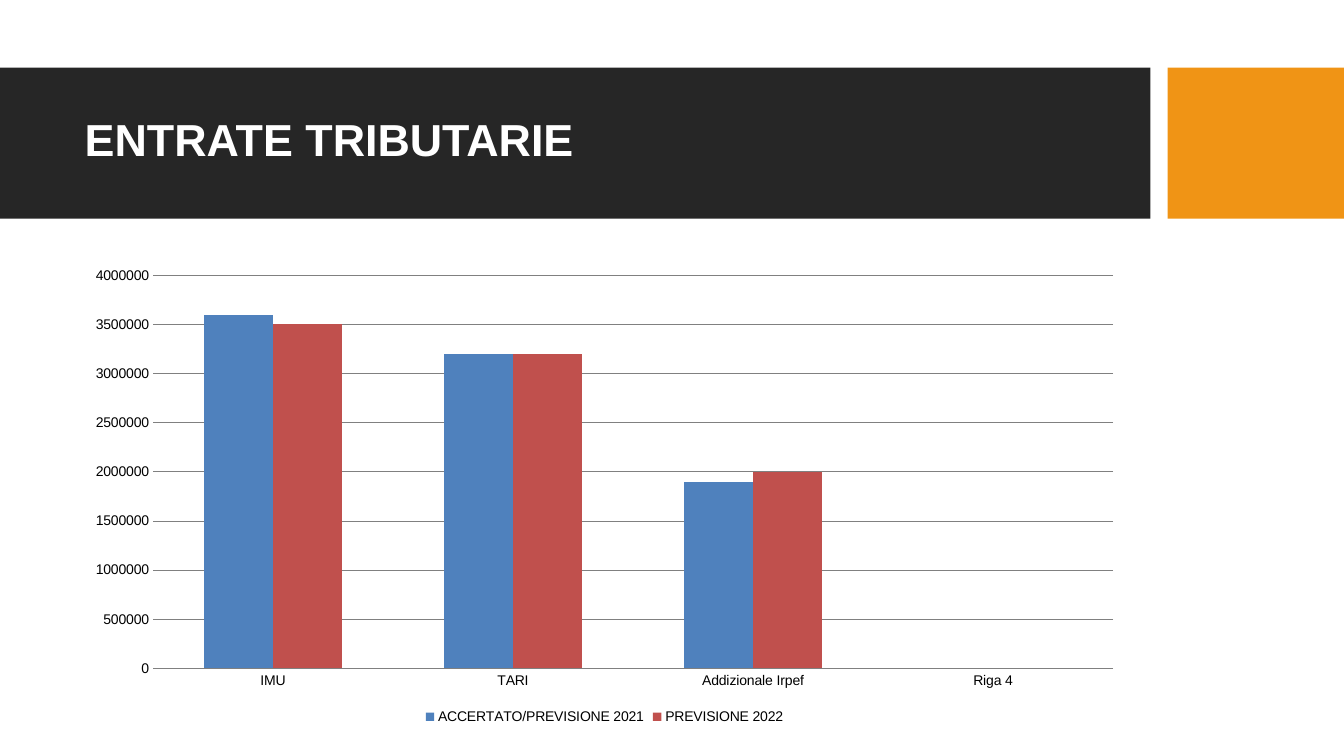
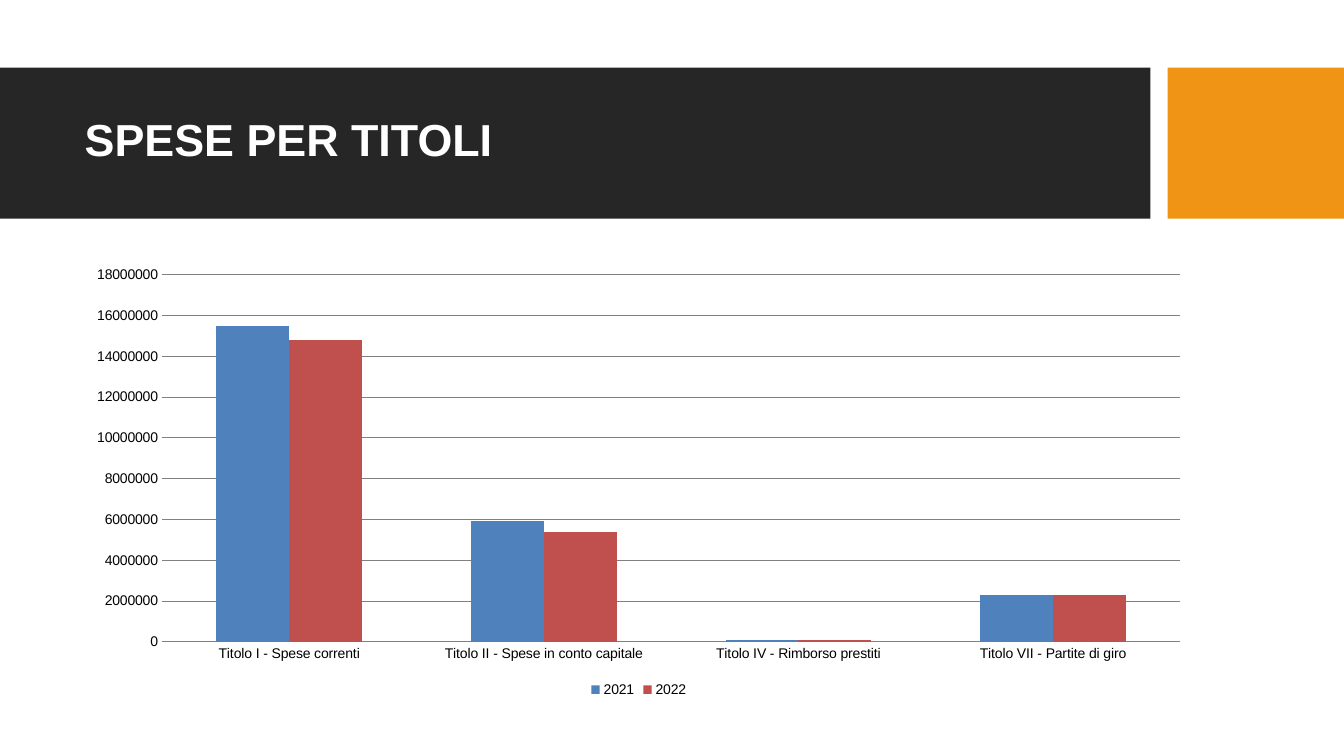
from pptx import Presentation
from pptx.chart.data import CategoryChartData as Data
from pptx.dml.color import RGBColor
from pptx.enum.chart import XL_CHART_TYPE as Kind
from pptx.enum.chart import XL_LEGEND_POSITION as Place
from pptx.enum.chart import XL_TICK_MARK as Tick
from pptx.enum.shapes import MSO_SHAPE as Shape
from pptx.enum.text import MSO_ANCHOR as Anchor
from pptx.enum.text import MSO_AUTO_SIZE as Fit
from pptx.enum.text import PP_ALIGN as Align
from pptx.util import Inches, Pt

DARK = RGBColor(0x26, 0x26, 0x26)
GOLD = RGBColor(0xF0, 0x94, 0x15)
WHITE = RGBColor(0xFF, 0xFF, 0xFF)
BLACK = RGBColor(0, 0, 0)
GRAY = RGBColor(0x80, 0x80, 0x80)
BLUE = RGBColor(0x4F, 0x81, 0xBD)
RED = RGBColor(0xC0, 0x50, 0x4D)
FONT = "Arial"

WIDE, HIGH = 13.33, 7.5
BANDS = [((0, 0.67, 11.41, 1.5), DARK), ((11.58, 0.67, 1.75, 1.5), GOLD)]
HEAD = (0.74, 0.82, 10.51, 1.18)

PAGES = [
    {
        "title": "ENTRATE TRIBUTARIE",
        "box": (0.74, 2.56, 10.51, 4.67),
        "cats": ["IMU", "TARI", "Addizionale Irpef", "Riga 4"],
        "rows": {
            "ACCERTATO/PREVISIONE 2021": [3600000, 3200000, 1900000, None],
            "PREVISIONE 2022": [3500000, 3200000, 2000000, None],
        },
        "top": 4000000,
        "step": 500000,
    },
    {
        "title": "SPESE PER TITOLI",
        "box": (0.74, 2.56, 11.19, 4.4),
        "cats": [
            "Titolo I - Spese correnti",
            "Titolo II - Spese in conto capitale",
            "Titolo IV - Rimborso prestiti",
            "Titolo VII - Partite di giro",
        ],
        "rows": {
            "2021": [15500000, 5900000, 100000, 2300000],
            "2022": [14800000, 5400000, 100000, 2300000],
        },
        "top": 18000000,
        "step": 2000000,
    },
]


def style(font, size, color, bold=False):
    """Set the face, size, colour and weight of a font."""
    font.name, font.size, font.bold = FONT, Pt(size), bold
    font.color.rgb = color


def write(frame, text, size=32, color=WHITE, bold=True, space=0.9):
    """Put one left-aligned line of text in a frame."""
    frame.word_wrap = True
    frame.auto_size = Fit.NONE
    frame.vertical_anchor = Anchor.MIDDLE
    line = frame.paragraphs[0]
    line.alignment = Align.LEFT
    line.line_spacing = space
    run = line.add_run()
    run.text = text
    style(run.font, size, color, bold)


def add_bands(layout, slide):
    """Draw the header bands and hand them to the shared layout."""
    tree = layout.element.cSld.spTree
    for box, color in BANDS:
        band = slide.shapes.add_shape(Shape.RECTANGLE, *map(Inches, box))
        band.shadow.inherit = False
        band.fill.solid()
        band.fill.fore_color.rgb = color
        band.line.fill.background()
        tree.insert(2, band.element)


def add_title(slide, text, box):
    """Place the title placeholder in its box."""
    title = slide.shapes.title
    title.left, title.top, title.width, title.height = map(Inches, box)
    write(title.text_frame, text)


def add_bars(slide, box, cats, rows, top, step):
    """Draw a clustered column chart in its box."""
    data = Data()
    data.categories = cats
    for name, vals in rows.items():
        data.add_series(name, vals)
    chart = slide.shapes.add_chart(
        Kind.COLUMN_CLUSTERED, *map(Inches, box), data).chart
    style(chart.font, 10, BLACK)
    chart.has_title = False
    chart.has_legend = True
    chart.legend.position = Place.BOTTOM
    chart.legend.include_in_layout = False
    plot = chart.plots[0]
    plot.gap_width, plot.overlap = 150, 0
    plot.vary_by_categories = False
    for bars, color in zip(plot.series, (BLUE, RED)):
        bars.format.fill.solid()
        bars.format.fill.fore_color.rgb = color
    for axis in (chart.category_axis, chart.value_axis):
        axis.major_tick_mark = axis.minor_tick_mark = Tick.NONE
        axis.format.line.fill.background()
    axis = chart.value_axis
    axis.minimum_scale, axis.maximum_scale = 0, top
    axis.major_unit = step
    grid = axis.major_gridlines.format.line
    grid.color.rgb = GRAY
    grid.width = Pt(0.75)


def main():
    """Build and save the deck."""
    deck = Presentation()
    deck.slide_width, deck.slide_height = Inches(WIDE), Inches(HIGH)
    layout = deck.slide_layouts[5]
    for num, page in enumerate(PAGES):
        slide = deck.slides.add_slide(layout)
        if num == 0:
            add_bands(layout, slide)
        add_title(slide, page["title"], HEAD)
        add_bars(slide, page["box"], page["cats"], page["rows"],
                 page["top"], page["step"])
    deck.save("out.pptx")


if __name__ == "__main__":
    main()
